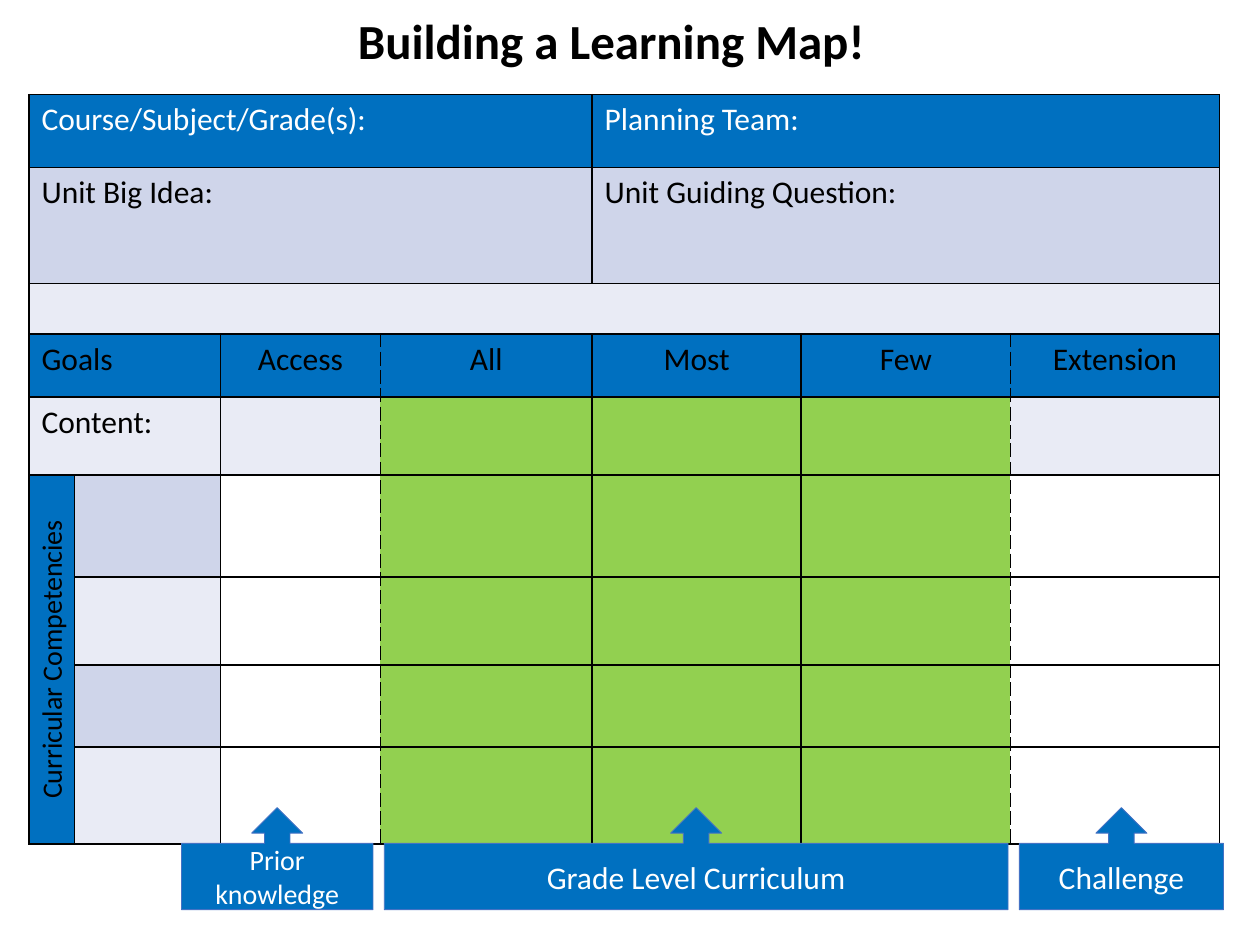
from lxml.etree import SubElement
from pptx import Presentation
from pptx.dml.color import RGBColor
from pptx.enum.shapes import MSO_SHAPE as Shape
from pptx.enum.text import MSO_ANCHOR as Anchor, MSO_AUTO_SIZE as AutoSize, PP_ALIGN as Align
from pptx.oxml.ns import qn
from pptx.util import Inches, Pt

FONT = "Calibri"
BLUE, GREEN, BLACK, WHITE = "0070C0", "92D050", "000000", "FFFFFF"
DARK_BAND, LIGHT_BAND, OUTLINE = "CFD5EA", "E9EBF5", "4472C4"

COLUMN_WIDTHS = [0.36, 1.16, 1.27, 1.68, 1.66, 1.66, 1.66]
ROW_HEIGHTS = [0.58, 0.92, 0.32, 0.5, 0.62, 0.81, 0.7, 0.65, 0.77]
GOALS_ROW, CONTENT_ROW, FIRST_COMPETENCY_ROW = 3, 4, 5
GRADE_LEVEL_COLUMNS = (3, 4, 5)

# first row, first column, last row, last column
MERGES = [(0, 0, 0, 3), (0, 4, 0, 6), (1, 0, 1, 3), (1, 4, 1, 6),
          (2, 0, 2, 6), (3, 0, 3, 1), (4, 0, 4, 1), (5, 0, 8, 0)]

# row, column, text, colour
LEFT_LABELS = [
    (0, 0, "Course/Subject/Grade(s):", WHITE),
    (0, 4, "Planning Team:", WHITE),
    (1, 0, "Unit Big Idea:", BLACK),
    (1, 4, "Unit Guiding Question:", BLACK),
    (GOALS_ROW, 0, "Goals", BLACK),
    (CONTENT_ROW, 0, "Content:", BLACK),
]
LEVELS = ["Access", "All", "Most", "Few", "Extension"]

# left, width, text, text size
CALLOUTS = [
    (3.05, 4.95, "Grade Level Curriculum", 18),
    (8.09, 1.62, "Challenge", 18),
    (1.44, 1.52, "Prior knowledge", 16),
]


def rgb(hex_colour):
    return RGBColor.from_string(hex_colour)


def write(frame, text, size, colour, align=Align.LEFT, bold=False):
    para = frame.paragraphs[0]
    para.alignment = align
    span = para.add_run()
    span.text = text
    span.font.name = FONT
    span.font.size = Pt(size)
    span.font.bold = bold
    span.font.color.rgb = rgb(colour)


def add_title(page):
    title = page.shapes.title
    title.left, title.top = Inches(0), Inches(0.03)
    title.width, title.height = Inches(9.7), Inches(0.57)
    frame = title.text_frame
    frame.word_wrap = True
    frame.auto_size = AutoSize.SHAPE_TO_FIT_TEXT
    frame.vertical_anchor = Anchor.TOP
    write(frame, "Building a Learning Map!", 28, BLACK, Align.CENTER, bold=True)


def cell_fill(row, column):
    if row in (0, GOALS_ROW):
        return BLUE
    if row < GOALS_ROW:
        return DARK_BAND if row == 1 else LIGHT_BAND
    if column in GRADE_LEVEL_COLUMNS:
        return GREEN
    if row == CONTENT_ROW:
        return LIGHT_BAND
    if column == 0:
        return BLUE
    if column == 1:
        return DARK_BAND if row % 2 else LIGHT_BAND
    return WHITE


def set_borders(cell, dashed_sides):
    properties = cell._tc.get_or_add_tcPr()
    for side in "LRTB":
        line = SubElement(properties, qn(f"a:ln{side}"), w=str(Pt(1)))
        fill = SubElement(line, qn("a:solidFill"))
        SubElement(fill, qn("a:srgbClr"), val=BLACK)
        dash = "lgDash" if side in dashed_sides else "solid"
        SubElement(line, qn("a:prstDash"), val=dash)


def dashed_sides(row, column):
    """Dashes fence off the grade-level columns from the goals row down."""
    if row < GOALS_ROW:
        return ""
    first, last = GRADE_LEVEL_COLUMNS[0], GRADE_LEVEL_COLUMNS[-1]
    if column in (first, last + 1):
        return "L"
    return "R" if column in (first - 1, last) else ""


def add_planning_table(page):
    table = page.shapes.add_table(
        len(ROW_HEIGHTS), len(COLUMN_WIDTHS), Inches(0.23), Inches(0.75),
        Inches(sum(COLUMN_WIDTHS)), Inches(sum(ROW_HEIGHTS))).table
    table.first_row = table.horz_banding = False
    for column, width in zip(table.columns, COLUMN_WIDTHS):
        column.width = Inches(width)
    for row, height in zip(table.rows, ROW_HEIGHTS):
        row.height = Inches(height)

    for row in range(len(ROW_HEIGHTS)):
        for column in range(len(COLUMN_WIDTHS)):
            cell = table.cell(row, column)
            set_borders(cell, dashed_sides(row, column))
            cell.fill.solid()
            cell.fill.fore_color.rgb = rgb(cell_fill(row, column))
    for top, left, bottom, right in MERGES:
        table.cell(top, left).merge(table.cell(bottom, right))

    for row, column, text, colour in LEFT_LABELS:
        write(table.cell(row, column).text_frame, text, 18, colour)
    for column, level in enumerate(LEVELS, start=2):
        write(table.cell(GOALS_ROW, column).text_frame, level, 18, BLACK, Align.CENTER)

    competencies = table.cell(FIRST_COMPETENCY_ROW, 0)
    competencies.vertical_anchor = Anchor.MIDDLE
    competencies._tc.get_or_add_tcPr().set("vert", "vert270")
    write(competencies.text_frame, "Curricular Competencies", 16, BLACK, Align.CENTER)


def add_callout(page, left, width, text, size):
    box = page.shapes.add_shape(Shape.UP_ARROW_CALLOUT, Inches(left), Inches(6.41),
                                Inches(width), Inches(0.81))
    box.shadow.inherit = False
    box.fill.solid()
    box.fill.fore_color.rgb = rgb(BLUE)
    box.line.color.rgb = rgb(OUTLINE)
    box.line.width = Pt(0.5)
    frame = box.text_frame
    frame.word_wrap = True
    frame.vertical_anchor = Anchor.MIDDLE
    write(frame, text, size, WHITE, Align.CENTER)


def main():
    deck = Presentation()
    deck.slide_width, deck.slide_height = Inches(10), Inches(7.5)
    page = deck.slides.add_slide(deck.slide_layouts[5])
    add_title(page)
    add_planning_table(page)
    for callout in CALLOUTS:
        add_callout(page, *callout)
    deck.save("out.pptx")


if __name__ == "__main__":
    main()
